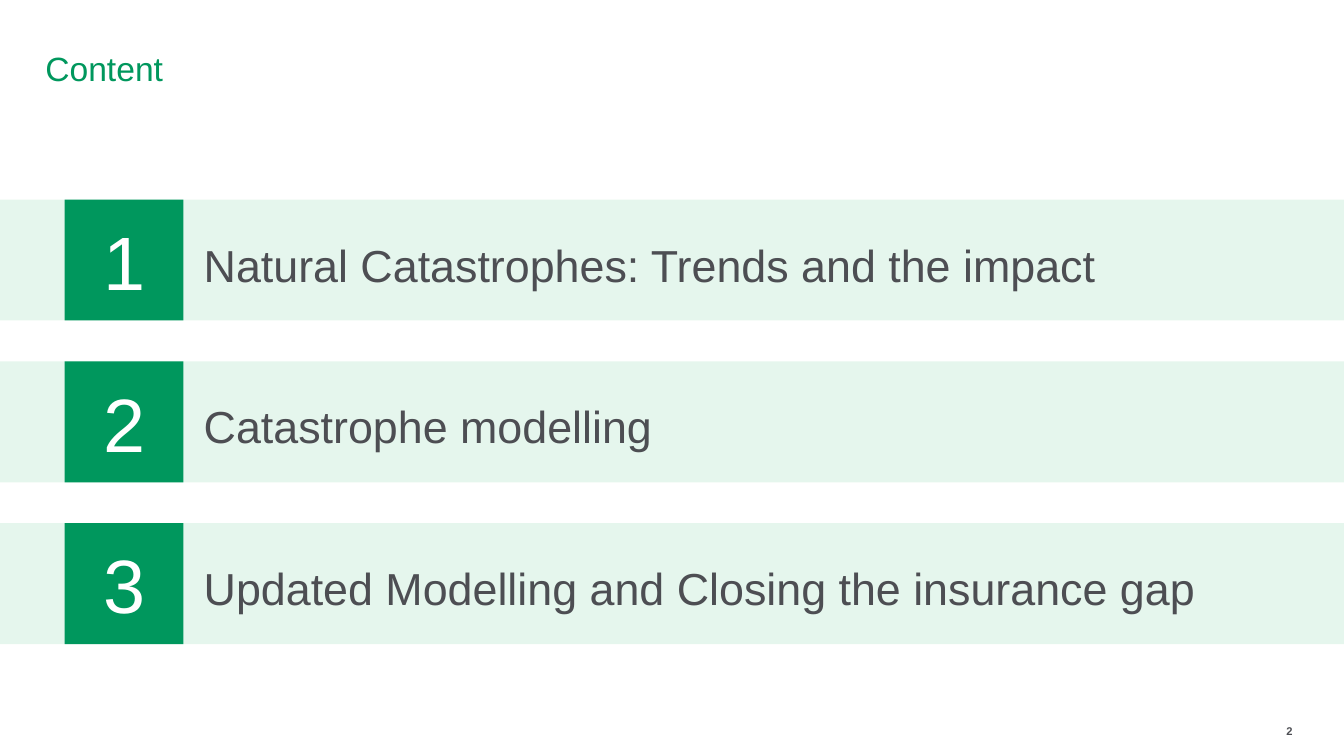
from lxml.etree import SubElement
from pptx import Presentation
from pptx.dml.color import RGBColor
from pptx.enum.shapes import MSO_SHAPE as Shape
from pptx.enum.text import MSO_ANCHOR as Anchor, PP_ALIGN as Align
from pptx.oxml.ns import qn
from pptx.util import Inches, Pt

COLORS = {"green": "00975D", "band": "00B050", "text": "4D4E53", "white": "FFFFFF"}
TOPICS = [
    "Natural Catastrophes: Trends and the impact",
    "Catastrophe modelling",
    "Updated Modelling and Closing the insurance gap",
]
WIDTH, HEIGHT = 13.33, 7.5
FIRST_ROW, ROW_PITCH, ROW_HEIGHT = 1.98, 1.605, 1.2
BADGE_LEFT, BADGE_WIDTH = 0.64, 1.18
TOPIC_LEFT, TOPIC_DROP, TOPIC_HEIGHT = 2.02, 0.32, 0.55

deck = Presentation()
deck.slide_width, deck.slide_height = Inches(WIDTH), Inches(HEIGHT)
slide = deck.slides.add_slide(deck.slide_layouts[6])


def write(holder, text, size, color, align=Align.LEFT, inset=None):
    """Fill a shape with one styled paragraph and return that paragraph."""
    frame = holder.text_frame
    frame.word_wrap = True
    if inset is not None:
        frame.margin_left = frame.margin_right = Inches(inset)
        frame.margin_top = frame.margin_bottom = Inches(inset)
    paragraph = frame.paragraphs[0]
    paragraph.text = text
    paragraph.alignment = align
    paragraph.font.name = "Arial"
    paragraph.font.size = Pt(size)
    paragraph.font.color.rgb = RGBColor.from_string(COLORS[color])
    return paragraph


def add_block(left, top, width, color):
    block = slide.shapes.add_shape(
        Shape.RECTANGLE, Inches(left), Inches(top), Inches(width), Inches(ROW_HEIGHT))
    block.shadow.inherit = False
    block.line.fill.background()
    block.fill.solid()
    block.fill.fore_color.rgb = RGBColor.from_string(COLORS[color])
    return block


title = slide.shapes.add_textbox(Inches(0.45), Inches(0.48), Inches(10.03), Inches(0.89))
write(title, "Content", 24, "green", inset=0)

page_number = slide.shapes.add_textbox(Inches(12.35), Inches(7.14), Inches(0.57), Inches(0.3))
write(page_number, "2", 8, "text", Align.RIGHT).font.bold = True

for row, topic in enumerate(TOPICS):
    top = FIRST_ROW + row * ROW_PITCH

    band = add_block(0, top, WIDTH, "band")
    band_color = next(band.fill._xPr.iter(qn("a:srgbClr")))
    SubElement(band_color, qn("a:alpha"), val="10000")

    badge = add_block(BADGE_LEFT, top, BADGE_WIDTH, "green")
    badge.text_frame.vertical_anchor = Anchor.MIDDLE
    write(badge, str(row + 1), 54, "white", Align.CENTER)

    topic_box = slide.shapes.add_textbox(
        Inches(TOPIC_LEFT), Inches(top + TOPIC_DROP),
        Inches(WIDTH - TOPIC_LEFT), Inches(TOPIC_HEIGHT))
    write(topic_box, topic, 32, "text", inset=0).line_spacing = 1.1

deck.save("out.pptx")
